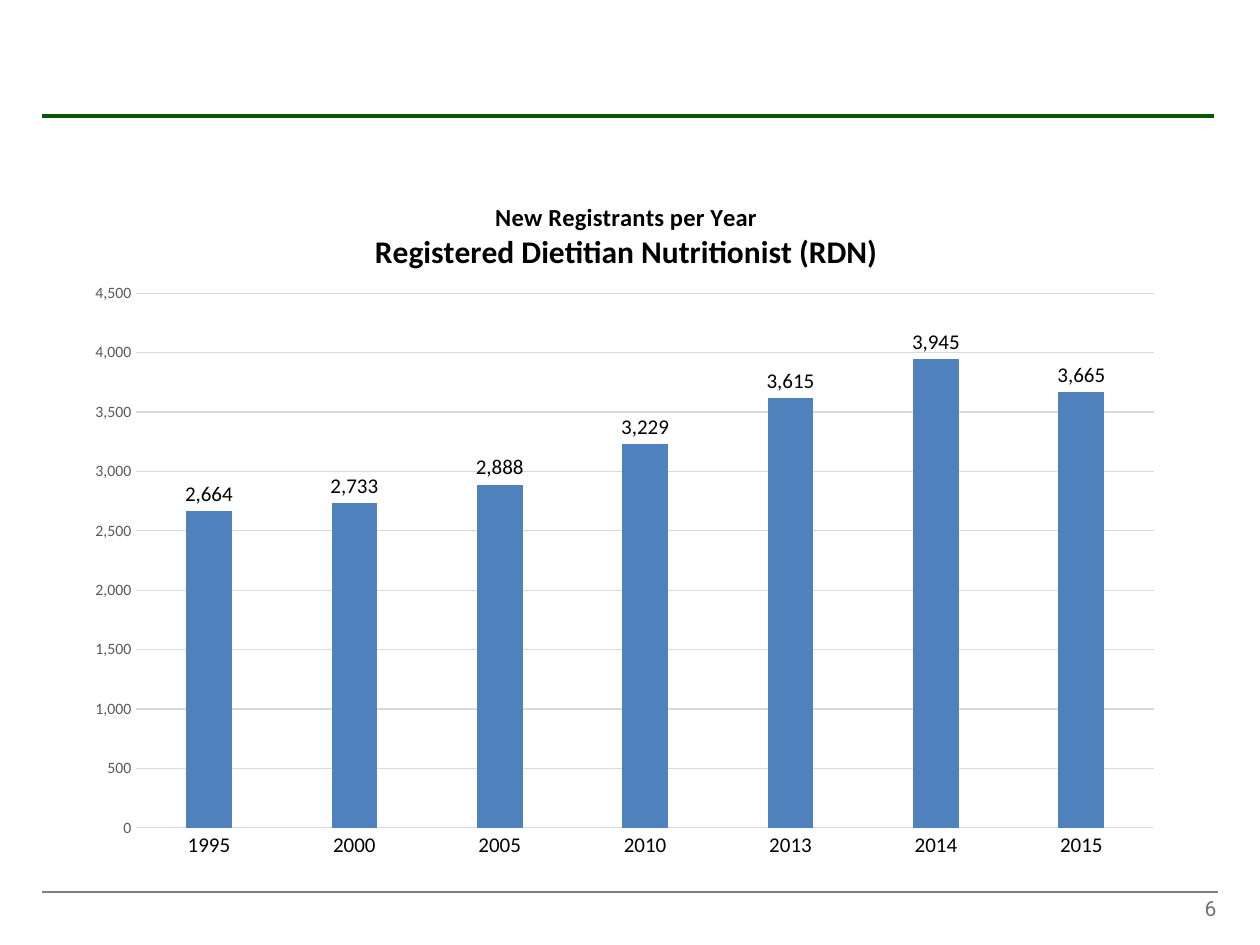
import pptx
import pptx.chart.data
import pptx.dml.color
import pptx.enum.chart
import pptx.enum.shapes
import pptx.enum.text
import pptx.oxml
import pptx.oxml.ns
import pptx.util
from pptx.util import Cm, Pt

COLORS = {
    "rule": "065901",
    "footer_rule": "808080",
    "page_number": "717171",
    "text": "000000",
    "axis_text": "595959",
    "grid": "D9D9D9",
    "bar": "4F81BD",
}
REGISTRANTS = {
    "1995": 2664, "2000": 2733, "2005": 2888, "2010": 3229,
    "2013": 3615, "2014": 3945, "2015": 3665,
}
TITLE_LINES = [
    ("New Registrants per Year", 14),
    ("Registered Dietitian Nutritionist (RDN)", 18),
]


def color(name):
    return pptx.dml.color.RGBColor.from_string(COLORS[name])


def style_font(font, size, color_name, face="Calibri", bold=False):
    font.size = Pt(size)
    font.name = face
    font.bold = bold
    font.color.rgb = color(color_name)


def style_line(line, color_name, width):
    line.color.rgb = color(color_name)
    line.width = Pt(width)


def add_rule(slide, left, right, top, color_name, width):
    rule = slide.shapes.add_connector(
        pptx.enum.shapes.MSO_CONNECTOR.STRAIGHT, Cm(left), Cm(top), Cm(right), Cm(top))
    style_line(rule.line, color_name, width)
    rule._element.spPr.append(pptx.oxml.parse_xml(
        "<a:effectLst %s/>" % pptx.oxml.ns.nsdecls("a")))


def add_page_number(slide, number):
    box = slide.shapes.add_textbox(Cm(18.85), Cm(17.98), Cm(5.92), Cm(0.64))
    frame = box.text_frame
    frame.word_wrap = True
    frame.vertical_anchor = pptx.enum.text.MSO_ANCHOR.MIDDLE
    para = frame.paragraphs[0]
    para.alignment = pptx.enum.text.PP_ALIGN.RIGHT
    span = para.add_run()
    span.text = number
    style_font(span.font, 12, "page_number", "Roboto")


def manual_layout(left, top, width=None, height=None):
    """Layout element in fractions of the chart; a size means the inner plot area."""
    parts = ['<c:layoutTarget val="inner"/>'] if width else []
    parts += ['<c:xMode val="edge"/>', '<c:yMode val="edge"/>']
    for tag, value in zip("xywh", (left, top, width, height)):
        if value is not None:
            parts.append('<c:%s val="%s"/>' % (tag, value))
    return pptx.oxml.parse_xml(
        "<c:layout %s><c:manualLayout>%s</c:manualLayout></c:layout>"
        % (pptx.oxml.ns.nsdecls("c"), "".join(parts)))


def set_layout(parent, layout, index):
    for old in parent.findall(pptx.oxml.ns.qn("c:layout")):
        parent.remove(old)
    parent.insert(index, layout)


def add_title(chart):
    chart.has_title = True
    title = chart.chart_title
    frame = title.text_frame
    for index, (text, size) in enumerate(TITLE_LINES):
        para = frame.add_paragraph() if index else frame.paragraphs[0]
        para.alignment = pptx.enum.text.PP_ALIGN.CENTER
        span = para.add_run()
        span.text = text
        style_font(span.font, size, "text", bold=True)
    title.include_in_layout = False
    set_layout(title._element, manual_layout(0.27, 0.04), 1)


def style_axes(chart):
    no_tick = pptx.enum.chart.XL_TICK_MARK.NONE
    years, counts = chart.category_axis, chart.value_axis
    for axis, size, color_name in ((years, 12, "text"), (counts, 9, "axis_text")):
        axis.major_tick_mark = axis.minor_tick_mark = no_tick
        style_font(axis.tick_labels.font, size, color_name)
    style_line(years.format.line, "grid", 0.75)
    counts.format.line.fill.background()
    counts.minimum_scale, counts.maximum_scale, counts.major_unit = 0, 4500, 500
    counts.has_major_gridlines = True
    style_line(counts.major_gridlines.format.line, "grid", 0.75)
    counts.tick_labels.number_format = "#,##0"
    counts.tick_labels.number_format_is_linked = False


def style_bars(plot):
    plot.gap_width = 219
    plot.overlap = -27
    plot.vary_by_categories = False
    bars = plot.series[0]
    bars.format.fill.solid()
    bars.format.fill.fore_color.rgb = color("bar")
    labels = bars.data_labels
    labels.show_value = True
    labels.number_format = "#,##0"
    labels.number_format_is_linked = False
    labels.position = pptx.enum.chart.XL_LABEL_POSITION.OUTSIDE_END
    style_font(labels.font, 12, "text")


def add_registrant_chart(slide):
    data = pptx.chart.data.CategoryChartData(number_format="#,##0")
    data.categories = list(REGISTRANTS)
    data.add_series("Series 1", list(REGISTRANTS.values()))
    chart = slide.shapes.add_chart(
        pptx.enum.chart.XL_CHART_TYPE.COLUMN_CLUSTERED,
        Cm(1.48), Cm(3.39), Cm(22.23), Cm(14.18), data).chart
    style_font(chart.font, 10, "text")
    chart.has_legend = False
    add_title(chart)
    style_axes(chart)
    style_bars(chart.plots[0])
    plot_area = chart._chartSpace.chart.plotArea
    set_layout(plot_area, manual_layout(0.057, 0.178, 0.923, 0.76), 0)


def main():
    deck = pptx.Presentation()
    deck.slide_width, deck.slide_height = Cm(25.4), Cm(19.05)
    slide = deck.slides.add_slide(deck.slide_layouts[6])

    # Header and footer
    add_rule(slide, 0.85, 24.55, 17.99, "footer_rule", 1)
    add_rule(slide, 0.85, 24.47, 2.33, "rule", 2.25)
    add_page_number(slide, "6")

    # Registrants by year
    add_registrant_chart(slide)

    deck.save("out.pptx")


if __name__ == "__main__":
    main()
